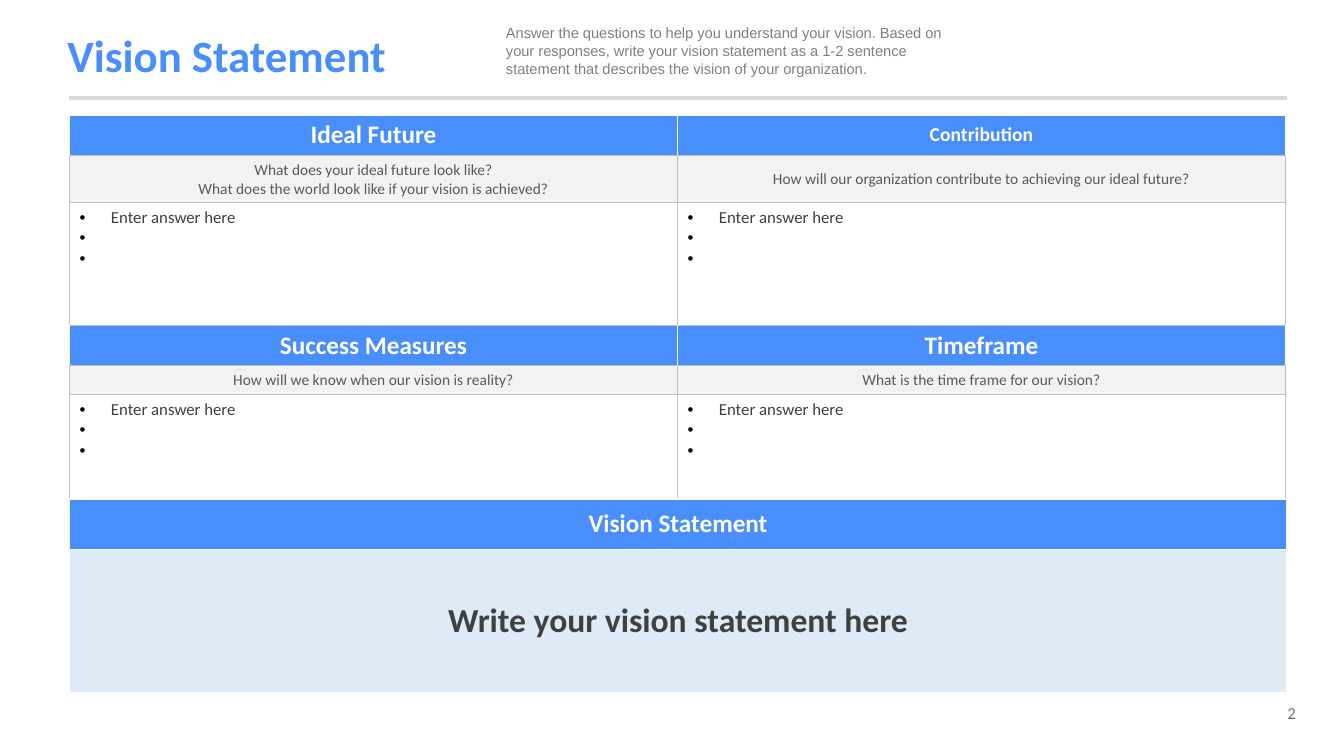
from lxml.etree import SubElement
from pptx import Presentation
from pptx.dml.color import RGBColor
from pptx.enum.shapes import MSO_CONNECTOR
from pptx.enum.text import MSO_ANCHOR as ANCHOR, PP_ALIGN as ALIGN
from pptx.oxml.ns import qn
from pptx.util import Inches, Pt

BLUE, WHITE, BLACK = "488EFD", "FFFFFF", "000000"
PALE_BLUE, PALE_GREY, GRID_GREY = "DEEBF7", "F2F2F2", "BFBFBF"
RULE_GREY, INTRO_GREY, NUMBER_GREY = "D8D8D8", "808080", "757070"
QUESTION_GREY, ANSWER_GREY = "595959", "404040"

HEADING = {"size": Pt(18), "bold": True, "color": WHITE}
SMALL_HEADING = HEADING | {"size": Pt(14)}
QUESTION = {"size": Pt(11), "bold": False, "color": QUESTION_GREY}
ANSWER = {"size": Pt(12), "bold": False, "color": ANSWER_GREY}
STATEMENT = {"size": Pt(24), "bold": True, "color": ANSWER_GREY}

# Each block: headings with their formats, then the questions below them
BLOCKS = [
    ([("Ideal Future", HEADING), ("Contribution", SMALL_HEADING)],
     [["What does your ideal future look like?",
       "What does the world look like if your vision is achieved?"],
      ["How will our organization contribute to achieving our ideal future?"]]),
    ([("Success Measures", HEADING), ("Timeframe", HEADING)],
     [["How will we know when our vision is reality?"],
      ["What is the time frame for our vision?"]]),
]
ANSWER_LINES = ["Enter answer here", " ", " "]
INTRO = ("Answer the questions to help you understand your vision. Based on your "
         "responses, write your vision statement as a 1-2 sentence statement that "
         "describes the vision of your organization.")


def rgb(color):
    return RGBColor.from_string(color)


def write(frame, lines, style, align=ALIGN.LEFT):
    """Fill a text frame with one paragraph per line and return the paragraphs."""
    for index, line in enumerate(lines):
        paragraph = frame.add_paragraph() if index else frame.paragraphs[0]
        paragraph.alignment = align
        run = paragraph.add_run()
        run.text = line
        for name, value in ({"name": "Calibri"} | style).items():
            if name == "color":
                run.font.color.rgb = rgb(value)
            else:
                setattr(run.font, name, value)
    return frame.paragraphs


def add_text(slide, box, text, style, align=ALIGN.LEFT, anchor=ANCHOR.TOP):
    frame = slide.shapes.add_textbox(*map(Inches, box)).text_frame
    frame.word_wrap = True
    frame.vertical_anchor = anchor
    return write(frame, [text], style, align)[0]


def add_rule(slide, left, right, y):
    rule = slide.shapes.add_connector(
        MSO_CONNECTOR.STRAIGHT, Inches(left), Inches(y), Inches(right), Inches(y))
    rule.line.color.rgb = rgb(RULE_GREY)
    rule.line.width = Pt(3)
    SubElement(rule._element.spPr, qn("a:effectLst"))


def add_grid(slide, left, top, column_widths, row_heights):
    table = slide.shapes.add_table(
        len(row_heights), len(column_widths), Inches(left), Inches(top),
        Inches(sum(column_widths)), Inches(sum(row_heights))).table
    table.first_row = table.horz_banding = False
    for column, width in zip(table.columns, column_widths):
        column.width = Inches(width)
    for row, height in zip(table.rows, row_heights):
        row.height = Inches(height)
    return table


def set_borders(cell, colors):
    """Draw 1 pt borders; colors lists left, right, top and bottom."""
    properties = cell._tc.get_or_add_tcPr()
    for side, color in zip("LRTB", colors):
        line = SubElement(properties, qn(f"a:ln{side}"), w=str(Pt(1)))
        fill = SubElement(line, qn("a:solidFill"))
        SubElement(fill, qn("a:srgbClr"), val=color)


def fill_cell(cell, lines, style, fill, borders,
              align=ALIGN.CENTER, anchor=ANCHOR.MIDDLE):
    set_borders(cell, borders)
    cell.fill.solid()
    cell.fill.fore_color.rgb = rgb(fill)
    cell.vertical_anchor = anchor
    return write(cell.text_frame, lines, style, align)


def add_bullet(paragraph):
    properties = paragraph._p.get_or_add_pPr()
    properties.set("marL", str(Inches(0.31)))
    properties.set("indent", str(Inches(-0.31)))
    color = SubElement(properties, qn("a:buClr"))
    SubElement(color, qn("a:srgbClr"), val=BLACK)
    SubElement(properties, qn("a:buFont"), typeface="Arial")
    SubElement(properties, qn("a:buChar"), char="•")


def add_question_table(slide):
    table = add_grid(slide, 0.69, 1.14, [6.03] * 2,
                     [0.32, 0.45, 1.22, 0.32, 0.27, 1.24])
    grid_borders = [GRID_GREY] * 4
    for block, (headings, questions) in enumerate(BLOCKS):
        top_row = block * 3
        heading_borders = [WHITE, WHITE, GRID_GREY if block else WHITE, GRID_GREY]
        for column, (heading, style) in enumerate(headings):
            fill_cell(table.cell(top_row, column), [heading], style, BLUE,
                      heading_borders)
            fill_cell(table.cell(top_row + 1, column), questions[column], QUESTION,
                      PALE_GREY, grid_borders)
            answers = fill_cell(table.cell(top_row + 2, column), ANSWER_LINES, ANSWER,
                                WHITE, grid_borders, ALIGN.LEFT, ANCHOR.TOP)
            for answer in answers:
                add_bullet(answer)


def add_statement_table(slide):
    table = add_grid(slide, 0.69, 4.95, [12.07], [0.5, 1.42])
    borders = [WHITE] * 4
    fill_cell(table.cell(0, 0), ["Vision Statement"], HEADING, BLUE, borders)
    fill_cell(table.cell(1, 0), ["Write your vision statement here"], STATEMENT,
              PALE_BLUE, borders)


def main():
    deck = Presentation()
    deck.slide_width, deck.slide_height = Inches(13.33), Inches(7.5)
    slide = deck.slides.add_slide(deck.slide_layouts[6])
    add_text(slide, (11.93, 6.92, 1.02, 0.3), "2",
             {"size": Pt(12), "color": NUMBER_GREY}, ALIGN.RIGHT)
    add_rule(slide, 0.68, 12.76, 0.97)
    title = add_text(slide, (0.57, 0.19, 10.94, 0.77), "Vision Statement",
                     {"size": Pt(32), "bold": True, "color": BLUE},
                     anchor=ANCHOR.MIDDLE)
    title.line_spacing = 0.9
    add_text(slide, (4.92, 0.19, 4.56, 0.63), INTRO,
             {"name": "Arial", "size": Pt(10.5), "color": INTRO_GREY})
    add_question_table(slide)
    add_statement_table(slide)
    deck.save("out.pptx")


if __name__ == "__main__":
    main()
